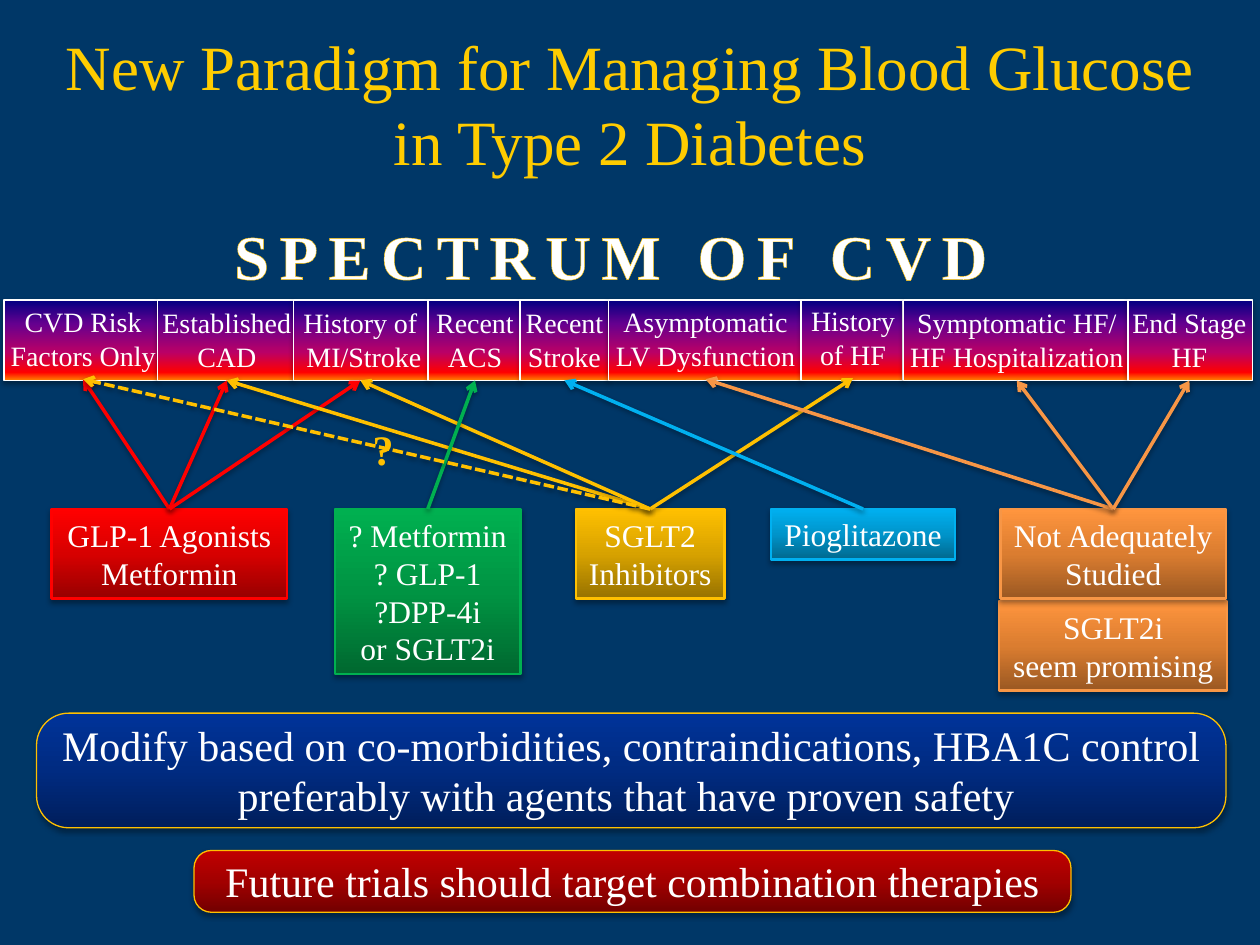
import lxml.etree
import pptx
import pptx.dml.color
import pptx.enum.dml
import pptx.enum.shapes
import pptx.enum.text
import pptx.oxml.ns
import pptx.util

COLS, ROWS = 100, 75
WHITE, GOLD = "FFFFFF", "FFC000"
SHAPE = pptx.enum.shapes.MSO_SHAPE
ANCHOR = pptx.enum.text.MSO_ANCHOR
ALIGN = pptx.enum.text.PP_ALIGN


def paint(code):
    return pptx.dml.color.RGBColor.from_string(code)


def node(root, tag, **attrs):
    return lxml.etree.SubElement(
        root, pptx.oxml.ns.qn("a:" + tag), {k: str(v) for k, v in attrs.items()})


class Board:
    face = "Times New Roman"

    def __init__(self, deck, back):
        self.slide = deck.slides.add_slide(deck.slide_layouts[6])
        self.wide = deck.slide_width / COLS
        self.high = deck.slide_height / ROWS
        fill = self.slide.background.fill
        fill.solid()
        fill.fore_color.rgb = paint(back)

    def place(self, x, y, w, h):
        return [round(n) for n in
                (x * self.wide, y * self.high, w * self.wide, h * self.high)]

    def shade(self, item, alpha, dist):
        effect = node(item._element.spPr, "effectLst")
        drop = node(effect, "outerShdw", blurRad=pptx.util.Pt(3.1),
                    dist=pptx.util.Pt(dist), dir=5400000, rotWithShape=0)
        node(node(drop, "srgbClr", val="000000"), "alpha", val=alpha * 1000)

    def letter(self, item, text, size, color=WHITE, bold=False, wrap=False,
               align=ALIGN.CENTER, grow=True):
        frame = item.text_frame
        frame.text = text
        frame.word_wrap = wrap
        if grow:
            frame.auto_size = pptx.enum.text.MSO_AUTO_SIZE.SHAPE_TO_FIT_TEXT
        for para in frame.paragraphs:
            para.alignment = align
            font = para.font
            font.name, font.size = self.face, pptx.util.Pt(size)
            font.bold = bold
            font.color.rgb = paint(color)

    def text(self, area, text, size, **style):
        item = self.slide.shapes.add_textbox(*self.place(*area))
        self.letter(item, text, size, **style)
        return item

    def block(self, area, stops, edge, width, angle=90, kind=SHAPE.RECTANGLE):
        item = self.slide.shapes.add_shape(kind, *self.place(*area))
        if kind == SHAPE.ROUNDED_RECTANGLE:
            item.adjustments[0] = 0.28
        item.fill.gradient()
        item.fill.gradient_angle = angle
        ramp = item._element.spPr.find(".//" + pptx.oxml.ns.qn("a:gsLst"))
        for stop in list(ramp):
            ramp.remove(stop)
        for pos, code in stops:
            node(node(ramp, "gs", pos=pos * 1000), "srgbClr", val=code)
        item.line.color.rgb = paint(edge)
        item.line.width = pptx.util.Pt(width)
        self.shade(item, 35, 1.8)
        return item

    def link(self, start, goal, color, dash=False):
        item = self.slide.shapes.add_connector(
            pptx.enum.shapes.MSO_CONNECTOR.STRAIGHT, 0, 0, 0, 0)
        item.begin_connect(start, 0)
        item.end_connect(goal, 2)
        item.line.color.rgb = paint(color)
        item.line.width = pptx.util.Pt(2)
        if dash:
            item.line.dash_style = pptx.enum.dml.MSO_LINE.SQUARE_DOT
        node(item.line._get_or_add_ln(), "tailEnd", type="arrow")
        self.shade(item, 38, 1.6)

    def trace(self, item, color, width, space):
        props = item.text_frame.paragraphs[0].runs[0]._r.get_or_add_rPr()
        props.set("spc", str(space * 100))
        line = node(props, "ln", w=pptx.util.Pt(width))
        node(node(line, "solidFill"), "srgbClr", val=color)


def ramp(*codes):
    return list(zip((0, 50, 100), codes))


BAND = list(zip((0, 30, 65, 90, 100),
                ("000082", "66008F", "BA0066", "FF0000", "FF8200")))
EDGES = (0.3, 12.5, 23.3, 34, 41.3, 48.3, 63.6, 71.7, 89.5, 99.4)
STAGES = (
    ("risk", "CVD Risk\nFactors Only", 6.6, 23.7, 13.7),
    ("cad", "Established\vCAD", 18, 23.8, 13.3),
    ("mi", "History of\v MI/Stroke", 28.6, 23.8, 11.8),
    ("acs", "Recent\vACS", 37.7, 23.8, 9),
    ("stroke", "Recent\nStroke", 44.8, 23.8, 8.3),
    ("lv", "Asymptomatic\nLV Dysfunction", 56, 23.7, 16.4),
    ("hf", "History\vof HF", 67.7, 23.6, 8.8),
    ("symp", "Symptomatic HF/\vHF Hospitalization", 80.7, 23.8, 19.2),
    ("end", "End Stage\vHF", 94.4, 23.8, 11.2),
)
ORANGE = ramp("9A5822", "DB7D30", "FF953E")
DRUGS = (
    ("glp", "GLP-1 Agonists\vMetformin", (4.1, 40.4, 18.7, 7.1),
     ramp("970000", "D70000", "FF0000"), "FF0000", ("risk", "cad", "mi")),
    ("sglt", "SGLT2\vInhibitors", (45.7, 40.4, 11.8, 7.1),
     ramp("977200", "D7A200", GOLD), GOLD, ("cad", "mi", "hf")),
    ("met", "? Metformin\v? GLP-1\n?DPP-4i\vor SGLT2i", (26.6, 40.4, 14.7, 13.1),
     ramp("00682F", "009443", "00B050"), "00B050", ("acs",)),
    ("pio", "Pioglitazone", (61.2, 40.4, 14.6, 4),
     ramp("00688E", "0094CA", "00B0F0"), "00B0F0", ("stroke",)),
    ("hope", "SGLT2i\vseem promising", (79.3, 47.7, 18.1, 7.1),
     ORANGE, "F79646", ()),
    ("open", "Not Adequately\vStudied", (79.4, 40.4, 17.9, 7.1),
     ORANGE, "F79646", ("lv", "symp", "end")),
)
NOTES = (
    ("Modify based on co-morbidities, contraindications, HBA1C control "
     "preferably with agents that have proven safety ",
     (2.9, 56.6, 94.4, 9.1), (0.9, 56.6, 98.4, 9.1),
     ramp("001E5B", "002B81", "003399")),
    ("Future trials should target combination therapies",
     (15.4, 67.5, 69.6, 4.9), (15.4, 67.4, 69.6, 5),
     ramp("720000", "A20000", "C00000")),
)


def main():
    deck = pptx.Presentation()
    deck.slide_width = pptx.util.Inches(10)
    deck.slide_height = pptx.util.Inches(7.5)
    board = Board(deck, "003767")

    title = board.text(
        (2.8, 1.9, 94.4, 12.5),
        "New Paradigm for Managing Blood Glucose in Type 2 Diabetes",
        36, color="FFCC00", wrap=True, grow=False)
    title.text_frame.vertical_anchor = ANCHOR.MIDDLE

    for left, right in zip(EDGES, EDGES[1:]):
        board.block((left, 23.8, right - left, 6.4), BAND, WHITE, 1, angle=270)
    goals = {}
    for key, label, mid, top, width in STAGES:
        goals[key] = board.text((mid - width / 2, top, width, 6.4), label, 16)

    head = board.text((17.6, 16.7, 63.3, 7.1), "SPECTRUM OF CVD", 36,
                      bold=True, align=ALIGN.LEFT)
    board.trace(head, GOLD, 0.25, 6)

    boxes = {}
    for key, label, area, stops, edge, ends in DRUGS:
        box = boxes[key] = board.block(area, stops, edge, 1.5)
        board.letter(box, label, 18)
        for end in ends:
            board.link(box, goals[end], edge)
    board.link(boxes["sglt"], goals["risk"], GOLD, dash=True)
    board.text((28.6, 33.1, 3.7, 5), "?", 24, color=GOLD, bold=True,
               align=ALIGN.LEFT)

    for label, area, inner, stops in NOTES:
        board.block(area, stops, GOLD, 0.75, kind=SHAPE.ROUNDED_RECTANGLE)
        board.text(inner, label, 24, wrap=True)

    deck.save("out.pptx")


if __name__ == "__main__":
    main()
